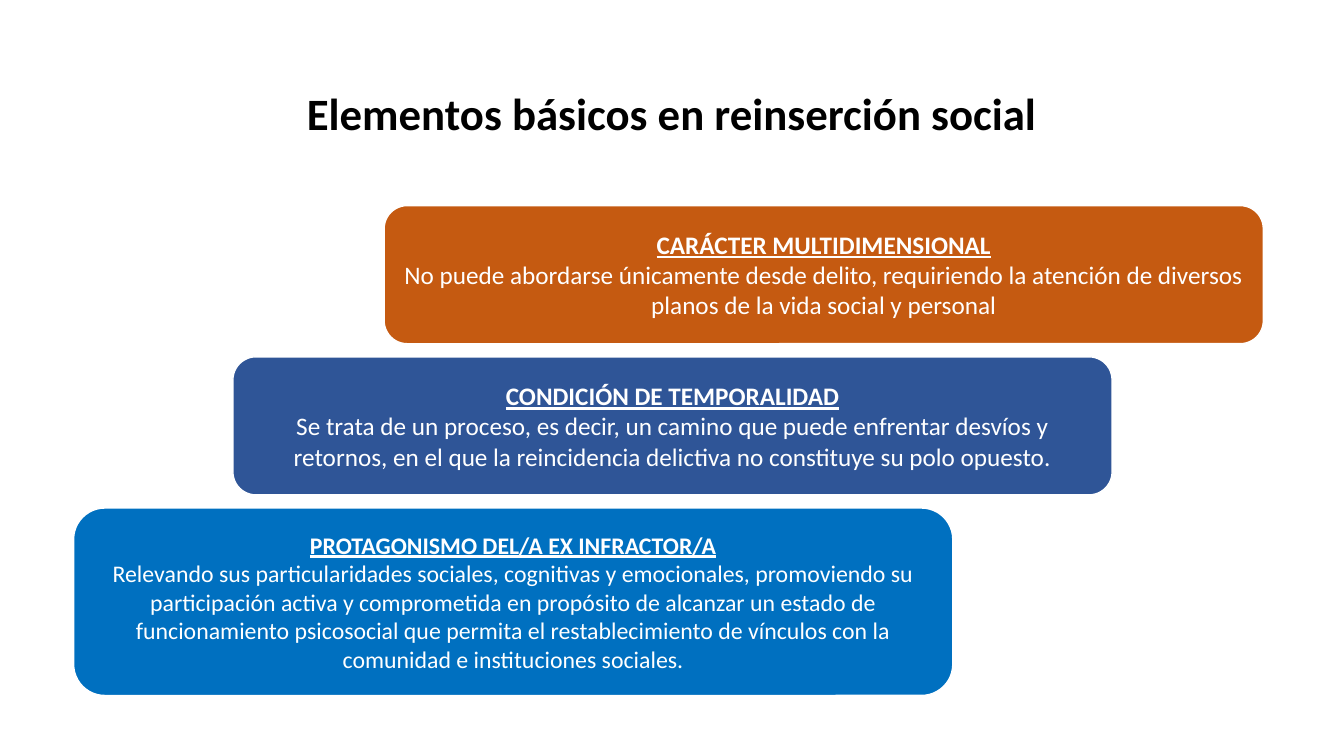
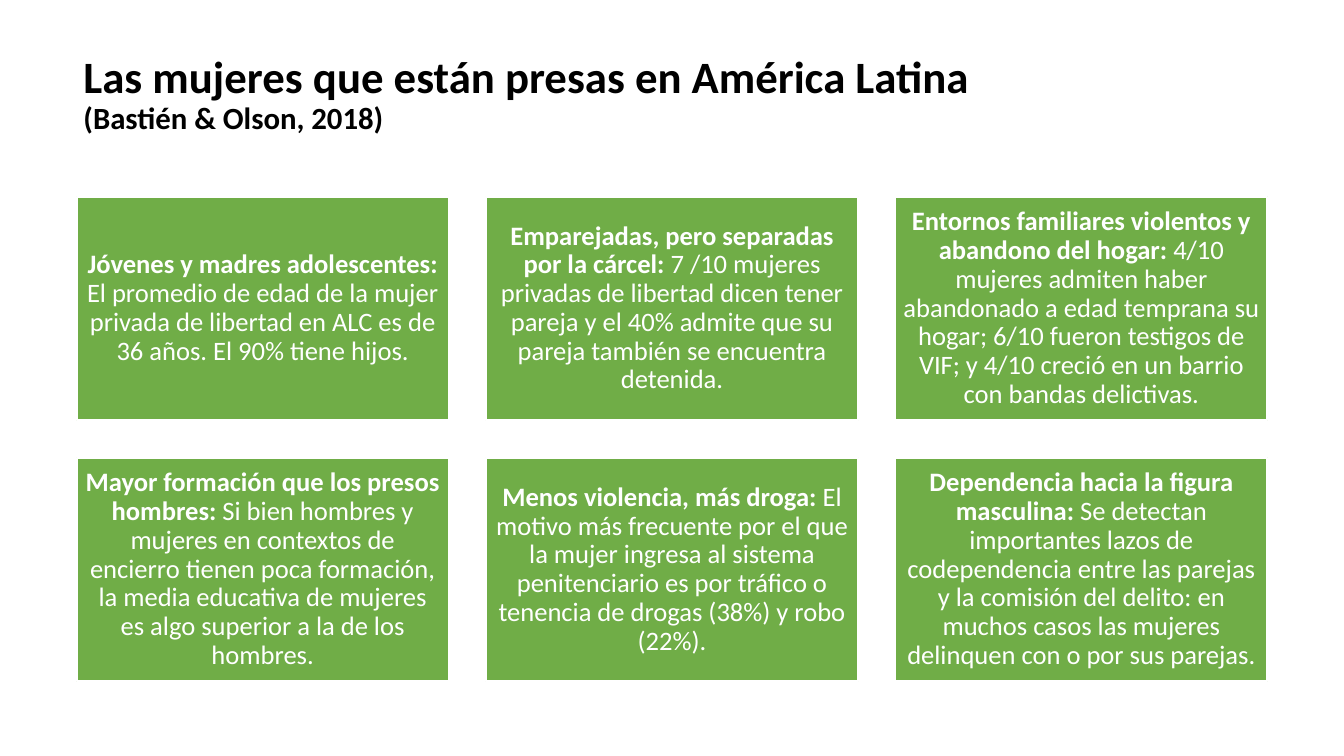
from pptx import Presentation
from pptx.dml.color import RGBColor
from pptx.enum.shapes import MSO_SHAPE
from pptx.enum.text import MSO_ANCHOR, PP_ALIGN
from pptx.util import Inches, Pt

RECT = MSO_SHAPE.RECTANGLE
ROUNDED = MSO_SHAPE.ROUNDED_RECTANGLE
MIDDLE = MSO_ANCHOR.MIDDLE
LEFT = PP_ALIGN.LEFT
CENTER = PP_ALIGN.CENTER

FONT = "Calibri"
BLACK = RGBColor(0x00, 0x00, 0x00)
WHITE = RGBColor(0xFF, 0xFF, 0xFF)
ORANGE = RGBColor(0xC5, 0x5A, 0x11)
NAVY = RGBColor(0x2F, 0x55, 0x97)
BLUE = RGBColor(0x00, 0x70, 0xC0)
GREEN = RGBColor(0x70, 0xAD, 0x47)


def write(p, text, size, color=WHITE, bold=False, underline=False, align=CENTER, spacing=1.0):
    p.alignment = align
    p.line_spacing = spacing
    r = p.add_run()
    r.text = text
    r.font.name = FONT
    r.font.size = Pt(size)
    r.font.bold = bold
    r.font.underline = underline
    r.font.color.rgb = color


def add_box(s, kind, left, top, width, height, fill=None, line=1):
    box = (Inches(left), Inches(top), Inches(width), Inches(height))
    if kind is None:
        sp = s.shapes.add_textbox(*box)
    else:
        sp = s.shapes.add_shape(kind, *box)
        sp.shadow.inherit = False
        sp.fill.solid()
        sp.fill.fore_color.rgb = fill
        sp.line.color.rgb = WHITE
        sp.line.width = Pt(line)
    tf = sp.text_frame
    tf.word_wrap = True
    tf.vertical_anchor = MIDDLE
    return tf


prs = Presentation()
prs.slide_width = Inches(13.33)
prs.slide_height = Inches(7.5)
blank = prs.slide_layouts[6]
title_style = dict(color=BLACK, bold=True, spacing=0.9)

s = prs.slides.add_slide(blank)
tf = add_box(s, None, 1.43, 0.73, 10.47, 0.84)
write(tf.paragraphs[0], "Elementos básicos en reinserción social", 32, **title_style)

steps = [
    (3.81, 2.04, 1.37, ORANGE, 18, "CARÁCTER MULTIDIMENSIONAL",
     "No puede abordarse únicamente desde delito, requiriendo la atención de diversos "
     "planos de la vida social y personal"),
    (2.31, 3.54, 1.37, NAVY, 18, "CONDICIÓN DE TEMPORALIDAD",
     "Se trata de un proceso, es decir, un camino que puede enfrentar desvíos y retornos, "
     "en el que la reincidencia delictiva no constituye su polo opuesto."),
    (0.73, 5.04, 1.86, BLUE, 17, "PROTAGONISMO DEL/A EX INFRACTOR/A",
     "Relevando sus particularidades sociales, cognitivas y emocionales, promoviendo su "
     "participación activa y comprometida en propósito de alcanzar un estado de "
     "funcionamiento psicosocial que permita el restablecimiento de vínculos con la "
     "comunidad e instituciones sociales."),
]
for left, top, height, fill, size, heading, body in steps:
    tf = add_box(s, ROUNDED, left, top, 8.72, height, fill)
    write(tf.paragraphs[0], heading, size, bold=True, underline=True)
    write(tf.add_paragraph(), body, size)

s = prs.slides.add_slide(blank)
tf = add_box(s, None, 0.73, 0.33, 11.93, 1.24)
write(tf.paragraphs[0], "Las mujeres que están presas en América Latina", 32, align=LEFT, **title_style)
write(tf.add_paragraph(), "(Bastién & Olson, 2018)", 22, align=LEFT, **title_style)

cards = [
    ("Jóvenes y madres adolescentes:",
     "El promedio de edad de la mujer privada de libertad en ALC es de 36 años. "
     "El 90% tiene hijos."),
    ("Emparejadas, pero separadas por la cárcel:",
     "7 /10 mujeres privadas de libertad dicen tener pareja y el 40% admite que su "
     "pareja también se encuentra detenida."),
    ("Entornos familiares violentos y abandono del hogar:",
     "4/10 mujeres admiten haber abandonado a edad temprana su hogar; 6/10 fueron "
     "testigos de VIF; y 4/10 creció en un barrio con bandas delictivas."),
    ("Mayor formación que los presos hombres:",
     "Si bien hombres y mujeres en contextos de encierro tienen poca formación, la media "
     "educativa de mujeres es algo superior a la de los hombres."),
    ("Menos violencia, más droga:",
     "El motivo más frecuente por el que la mujer ingresa al sistema penitenciario es "
     "por tráfico o tenencia de drogas (38%) y robo (22%)."),
    ("Dependencia hacia la figura masculina:",
     "Se detectan importantes lazos de codependencia entre las parejas y la comisión del "
     "delito: en muchos casos las mujeres delinquen con o por sus parejas."),
]
card_w, card_h, gap = 3.69, 2.22, 0.37
for i, (heading, body) in enumerate(cards):
    row, col = divmod(i, 3)
    left = 0.76 + col * (card_w + gap)
    top = 1.95 + row * (card_h + gap)
    tf = add_box(s, RECT, left, top, card_w, card_h, GREEN, 1.5)
    tf.margin_left = tf.margin_right = tf.margin_top = tf.margin_bottom = Inches(0.08)
    p = tf.paragraphs[0]
    write(p, heading, 19, bold=True, spacing=0.9)
    write(p, " " + body, 19, spacing=0.9)

prs.save("out.pptx")
